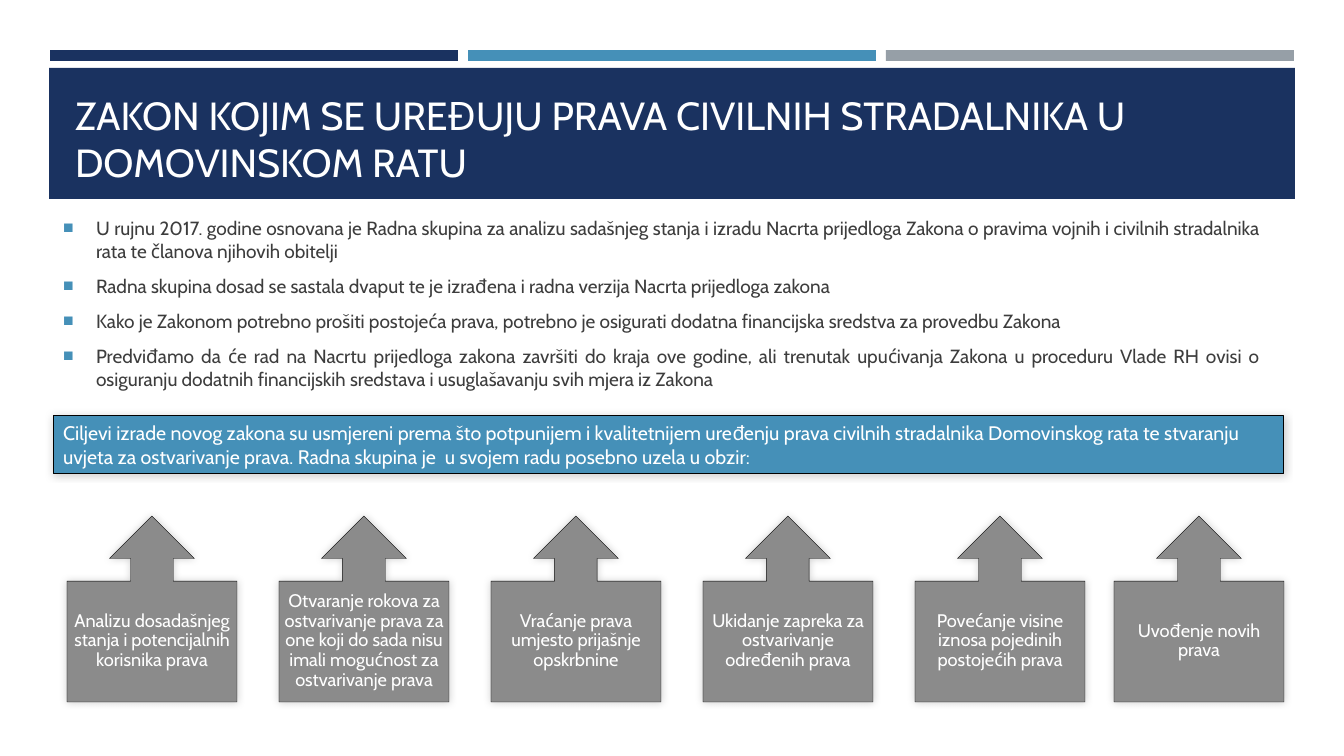
from lxml import etree
from pptx import Presentation
from pptx.dml.color import RGBColor
from pptx.enum.shapes import MSO_SHAPE as SHAPE
from pptx.enum.text import MSO_ANCHOR as ANCHOR, MSO_AUTO_SIZE as AUTO, PP_ALIGN as ALIGN
from pptx.oxml import parse_xml
from pptx.oxml.ns import nsdecls
from pptx.util import Pt

TITLE = "ZAKON KOJIM SE UREĐUJU PRAVA CIVILNIH STRADALNIKA U DOMOVINSKOM RATU"
BULLETS = [
    "U rujnu 2017. godine osnovana je Radna skupina za analizu sadašnjeg stanja i izradu Nacrta "
    "prijedloga Zakona o pravima vojnih i civilnih stradalnika rata te članova njihovih obitelji",
    "Radna skupina dosad se sastala dvaput te je izrađena i radna verzija Nacrta prijedloga zakona",
    "Kako je Zakonom potrebno prošiti postojeća prava, potrebno je osigurati dodatna financijska "
    "sredstva za provedbu Zakona",
    "Predviđamo da će rad na Nacrtu prijedloga zakona završiti do kraja ove godine, ali trenutak "
    "upućivanja Zakona u proceduru Vlade RH ovisi o osiguranju dodatnih financijskih sredstava i "
    "usuglašavanju svih mjera iz Zakona",
]
GOALS_INTRO = (
    "Ciljevi izrade novog zakona su usmjereni prema što potpunijem i kvalitetnijem uređenju prava "
    "civilnih stradalnika Domovinskog rata te stvaranju uvjeta za ostvarivanje prava. "
    "Radna skupina je  u svojem radu posebno uzela u obzir:"
)
GOALS = [
    "Analizu dosadašnjeg stanja i potencijalnih korisnika prava",
    "Otvaranje rokova za ostvarivanje prava za one koji do sada nisu imali mogućnost za "
    "ostvarivanje prava",
    "Vraćanje prava umjesto prijašnje opskrbnine",
    "Ukidanje zapreka za ostvarivanje određenih prava",
    "Povećanje visine iznosa pojedinih postojećih prava",
    "Uvođenje novih prava",
]

FONT = "Cabin"
NAVY = RGBColor(0x1A, 0x32, 0x60)
BLUE = RGBColor(0x45, 0x90, 0xB8)
SILVER = RGBColor(0x96, 0x9F, 0xA7)
GRAY = RGBColor(0x8B, 0x8B, 0x8B)
INK = RGBColor(0x3D, 0x3D, 0x3D)
BLACK = RGBColor(0, 0, 0)
WHITE = RGBColor(0xFF, 0xFF, 0xFF)

PX = 914400 / 100.8
BANNER = (53, 416, 1231, 58)
STRIPE_X, STRIPE_PITCH = 50, 418
CALLOUT_X, CALLOUT_PITCH, CALLOUT_W = 67, 212, 170


def px(*lengths):
    return [round(n * PX) for n in lengths]


def add_box(slide, kind, box, fill, line_width=None, shadow=False):
    sp = slide.shapes.add_shape(kind, *px(*box))
    sp.fill.solid()
    sp.fill.fore_color.rgb = fill
    sp.shadow.inherit = False
    if line_width:
        sp.line.color.rgb = BLACK
        sp.line.width = Pt(line_width)
    else:
        sp.line.fill.background()
    if shadow:
        effects = sp._element.spPr.find("{*}effectLst")
        effects.append(parse_xml(
            f'<a:outerShdw {nsdecls("a")} blurRad="{Pt(6)}" dist="0" dir="13500000">'
            '<a:srgbClr val="000000"><a:alpha val="20000"/></a:srgbClr></a:outerShdw>'))
    return sp


def write(sp, *texts, size, color=WHITE, align=ALIGN.LEFT, anchor=ANCHOR.MIDDLE,
          before=0, after=0, spacing=1.0, insets=(10, 5, 10, 5)):
    """Fill a shape with one paragraph per text; insets are left, top, right, bottom in px."""
    tf = sp.text_frame
    tf.word_wrap = True
    tf.auto_size = AUTO.NONE
    tf.vertical_anchor = anchor
    tf.margin_left, tf.margin_top, tf.margin_right, tf.margin_bottom = px(*insets)
    for i, text in enumerate(texts):
        p = tf.add_paragraph() if i else tf.paragraphs[0]
        p.alignment = align
        p.space_before, p.space_after = Pt(before), Pt(after)
        p.line_spacing = spacing
        r = p.add_run()
        r.text = text
        r.font.name = FONT
        r.font.size = Pt(size)
        r.font.color.rgb = color
    return tf


def add_bullet(p):
    pPr = p._p.get_or_add_pPr()
    indent = px(33)[0]
    pPr.set("marL", str(indent))
    pPr.set("indent", str(-indent))
    color = etree.SubElement(pPr, pPr.tag.replace("pPr", "buClr"))
    etree.SubElement(color, pPr.tag.replace("pPr", "srgbClr"), val=str(BLUE))
    for tag, attrs in (("buSzPct", {"val": "92000"}),
                       ("buFont", {"typeface": "Arial"}),
                       ("buChar", {"char": "■"})):
        etree.SubElement(pPr, pPr.tag.replace("pPr", tag), attrs)


def add_header(slide):
    for i, color in enumerate((NAVY, BLUE, SILVER)):
        add_box(slide, SHAPE.RECTANGLE, (STRIPE_X + i * STRIPE_PITCH, 50, 408, 11), color)
    panel = add_box(slide, SHAPE.RECTANGLE, (49, 68, 1246, 131), NAVY)
    title = slide.shapes.title
    title.left, title.top, title.width, title.height = px(65, 78, 1215, 112)
    write(title, TITLE, size=28, anchor=ANCHOR.BOTTOM)
    panel._element.addnext(title._element)


def add_goals(slide):
    banner = add_box(slide, SHAPE.RECTANGLE, BANNER, BLUE, 0.75, shadow=True)
    write(banner, GOALS_INTRO, size=14, anchor=ANCHOR.TOP, before=2.8, after=6)
    last_x = BANNER[0] + BANNER[2] - CALLOUT_W
    for i, goal in enumerate(GOALS):
        x = min(CALLOUT_X + i * CALLOUT_PITCH, last_x)
        callout = add_box(slide, SHAPE.UP_ARROW_CALLOUT, (x, 516, CALLOUT_W, 186),
                          GRAY, 0.25, shadow=True)
        write(callout, goal, size=13, align=ALIGN.CENTER, spacing=0.9, insets=(3, 1, 3, 2))


def main():
    prs = Presentation()
    prs.slide_width, prs.slide_height = px(1344, 756)
    slide = prs.slides.add_slide(prs.slide_layouts[5])
    add_header(slide)
    body = slide.shapes.add_textbox(*px(53, 215, 1216, 176))
    tf = write(body, *BULLETS, size=13.6, color=INK, align=ALIGN.JUSTIFY, before=2.7, after=6)
    for p in tf.paragraphs:
        add_bullet(p)
    add_goals(slide)
    prs.save("out.pptx")


if __name__ == "__main__":
    main()
